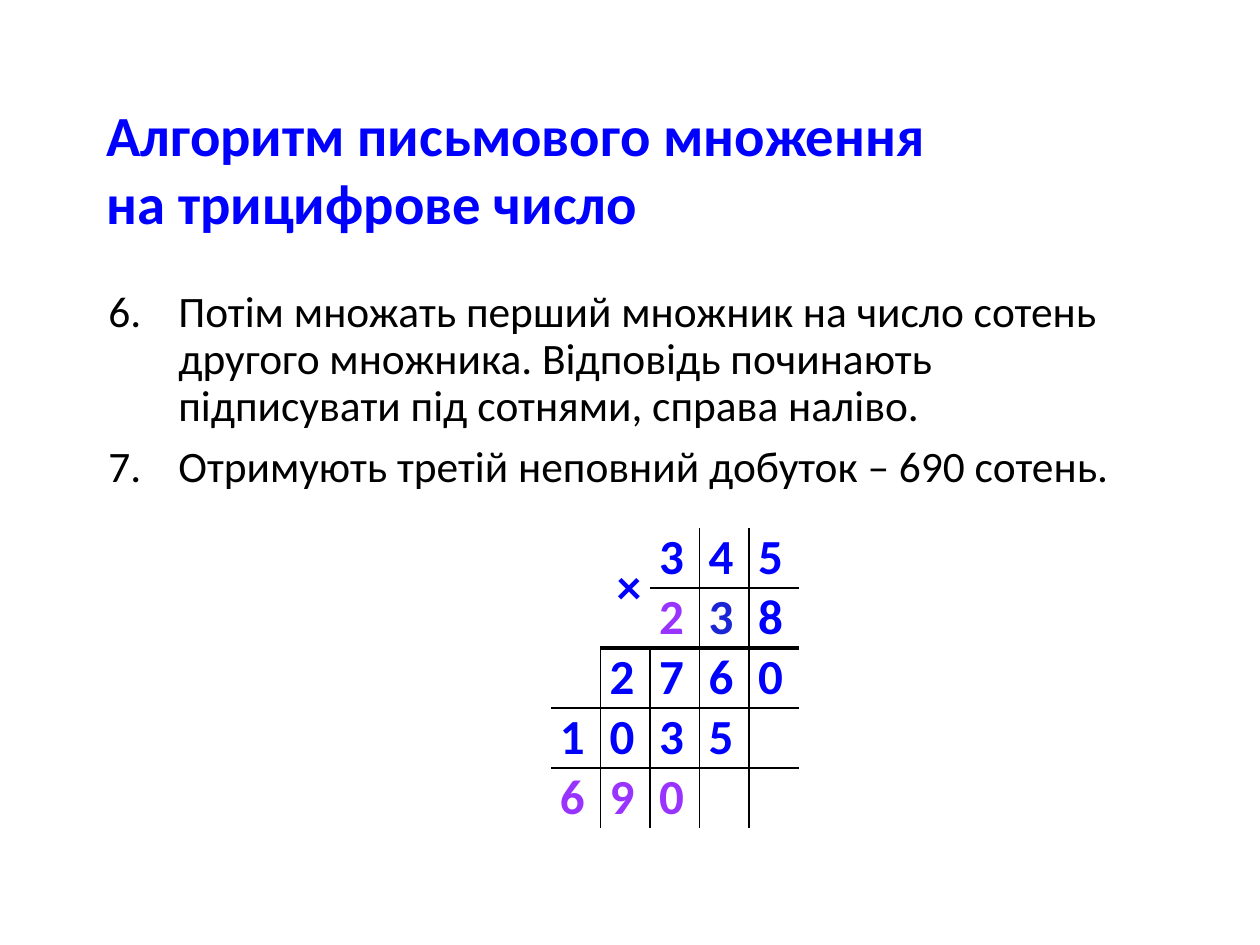
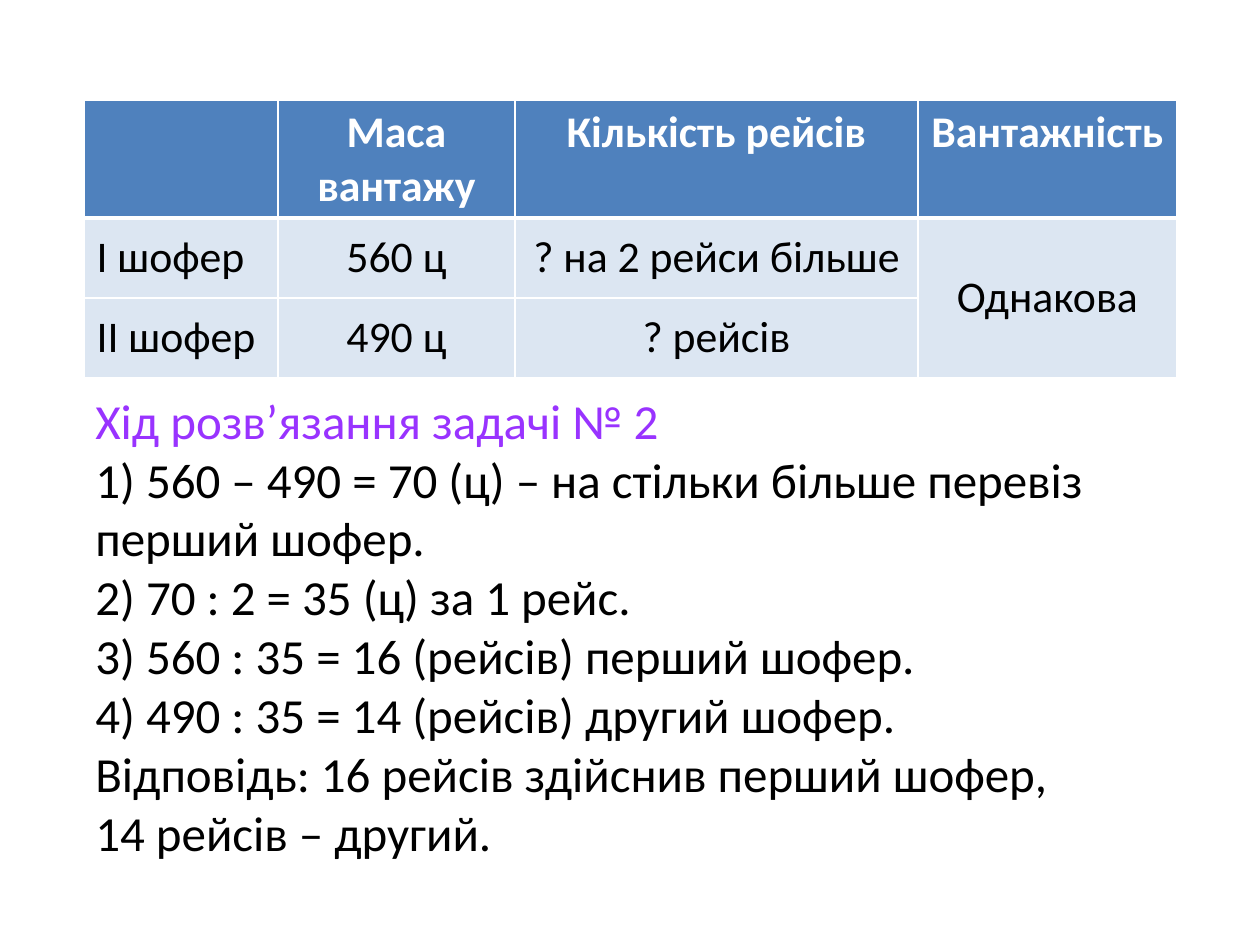
from itertools import product
from lxml.etree import SubElement
from pptx import Presentation
from pptx.dml.color import RGBColor
from pptx.enum.text import MSO_ANCHOR, PP_ALIGN
from pptx.oxml.ns import qn
from pptx.util import Pt

SCALE = 914400 / 126
BLACK = RGBColor(0, 0, 0)
WHITE = RGBColor(255, 255, 255)
BLUE = RGBColor(0, 0, 255)
NAVY = RGBColor(0x1C, 0x25, 0xD6)
VIOLET = RGBColor(0x99, 0x33, 0xFF)
STEEL = RGBColor(0x4F, 0x81, 0xBD)
PALE = RGBColor(0xDC, 0xE6, 0xF2)

FACE = "Calibri"
TITLE = {"name": FACE, "size": Pt(32.4), "bold": True}
BODY = {"name": FACE, "size": Pt(24.8)}
DIGIT = {"name": FACE, "size": Pt(28), "bold": True}
HEAD = {"name": FACE, "size": Pt(25), "bold": True}
ENTRY = {"name": FACE, "size": Pt(25), "bold": False}
STEP = {"name": FACE, "size": Pt(28)}
TIGHT = {"margin_left": 9, "margin_right": 9, "margin_top": 0, "margin_bottom": 0}
PLAIN = "{2D5ABB26-0587-4C30-8999-92F81FD0307C}"

RULES = (
    "Потім множать перший множник на число сотень другого множника. "
    "Відповідь починають підписувати під сотнями, справа наліво.",
    "Отримують третій неповний добуток – 690 сотень.",
)
DIGITS = (" ×345", "  238", " 2760", "1035 ", "690  ")
TINTS = {(1, 2): VIOLET, (1, 3): NAVY, (4, 0): VIOLET, (4, 1): VIOLET, (4, 2): VIOLET}
FREIGHT = (
    ("", "Маса вантажу", "Кількість рейсів", "Вантажність"),
    ("І шофер", "560 ц", "? на 2 рейси більше", "Однакова"),
    ("ІІ шофер", "490 ц", "? рейсів", ""),
)
STEPS = (
    "Хід розв’язання задачі № 2",
    "1) 560 – 490 = 70 (ц) – на стільки більше перевіз\nперший шофер.",
    "2) 70 : 2 = 35 (ц) за 1 рейс.",
    "3) 560 : 35 = 16 (рейсів) перший шофер.",
    "4) 490 : 35 = 14 (рейсів) другий шофер.",
    "Відповідь: 16 рейсів здійснив перший шофер,\n14 рейсів – другий.",
)


def px(size):
    return round(size * SCALE)


def write(para, text, look, tint):
    para.text = text
    for run in para.runs:
        for name, value in look.items():
            setattr(run.font, name, value)
        run.font.color.rgb = tint


def add_text(slide, place, lines, look, tint):
    box = slide.shapes.add_textbox(*map(px, place))
    frame = box.text_frame
    frame.word_wrap = True
    for index, line in enumerate(lines):
        para = frame.add_paragraph() if index else frame.paragraphs[0]
        write(para, line, look, tint)
    return box


def paint(box):
    box.fill.solid()
    box.fill.fore_color.rgb = WHITE


def number(para, start):
    props = para._p.get_or_add_pPr()
    props.set("marL", str(px(70)))
    props.set("indent", str(px(-70)))
    SubElement(props, qn("a:buFont"), typeface="+mj-lt")
    SubElement(props, qn("a:buAutoNum"), type="arabicPeriod", startAt=str(start))


def edge(cell, side, width, tint):
    line = SubElement(cell._tc.get_or_add_tcPr(), qn(f"a:ln{side}"), w=str(Pt(width)))
    fill = SubElement(line, qn("a:solidFill"))
    SubElement(fill, qn("a:srgbClr"), val=str(tint))


def add_grid(slide, place, cols, rows):
    left, top = place
    size = (left, top, sum(cols), sum(rows))
    grid = slide.shapes.add_table(len(rows), len(cols), *map(px, size)).table
    grid._tbl.tblPr[0].text = PLAIN
    grid.first_row = grid.horz_banding = False
    for col, width in zip(grid.columns, cols):
        col.width = px(width)
    for row, height in zip(grid.rows, rows):
        row.height = px(height)
    return grid


def level(row, col):
    if not 0 < row < 5 or col < (2, 1, 0, 0)[row - 1]:
        return 0
    return 2.25 if row == 2 else 1


def upright(row, col):
    return int(0 < col < 5 and (row >= 2 or col >= 3))


def add_sum(slide):
    grid = add_grid(slide, (551, 528), [49.6] * 5, [60] * 5)
    for row, col in product(range(5), repeat=2):
        cell = grid.cell(row, col)
        for name, value in TIGHT.items():
            setattr(cell, name, px(value))
        foot = 2 if (row, col) == (0, 1) else row + 1
        sides = {
            "L": upright(row, col),
            "R": upright(row, col + 1),
            "T": level(row, col),
            "B": level(foot, col),
        }
        for side, width in sides.items():
            if width:
                edge(cell, side, width, BLACK)
        cell.fill.background()
        mark = DIGITS[row][col].strip()
        if mark:
            write(cell.text_frame.paragraphs[0], mark, DIGIT, TINTS.get((row, col), BLUE))
    for col in range(2):
        grid.cell(0, col).merge(grid.cell(1, col))
    sign = grid.cell(0, 1)
    sign.vertical_anchor = MSO_ANCHOR.MIDDLE
    sign.text_frame.paragraphs[0].alignment = PP_ALIGN.RIGHT


def add_freight(slide):
    grid = add_grid(slide, (84, 100), (194, 237, 403, 259), (118, 80, 80))
    for row, col in product(range(3), range(4)):
        cell = grid.cell(row, col)
        for side in "LRTB":
            thick = (row, side) in ((0, "B"), (1, "T"))
            edge(cell, side, 3 if thick else 1, WHITE)
        cell.fill.solid()
        cell.fill.fore_color.rgb = PALE if row else STEEL
        para = cell.text_frame.paragraphs[0]
        if FREIGHT[row][col]:
            write(para, FREIGHT[row][col], ENTRY if row else HEAD, BLACK if row else WHITE)
        if row:
            cell.vertical_anchor = MSO_ANCHOR.MIDDLE
        if col:
            para.alignment = PP_ALIGN.CENTER
    grid.cell(1, 3).merge(grid.cell(2, 3))


def show_rule(slide):
    head = "Алгоритм письмового множення\nна трицифрове число"
    title = add_text(slide, (94, 101, 1092, 134), [head], TITLE, BLUE)
    title.text_frame.vertical_anchor = MSO_ANCHOR.MIDDLE
    body = add_text(slide, (96, 284, 1041, 247), RULES, BODY, BLACK)
    paint(body)
    first, second = body.text_frame.paragraphs
    first.line_spacing = 0.9
    second.space_before = Pt(5)
    for para in (first, second):
        number(para, 6)
    add_sum(slide)


def show_task(slide):
    add_freight(slide)
    steps = add_text(slide, (83, 384, 1094, 488), STEPS, STEP, BLACK)
    paint(steps)
    steps.text_frame.paragraphs[0].runs[0].font.color.rgb = VIOLET


def main():
    deck = Presentation()
    deck.slide_width, deck.slide_height = px(1260), px(945)
    for show in (show_rule, show_task):
        show(deck.slides.add_slide(deck.slide_layouts[6]))
    deck.save("out.pptx")


if __name__ == "__main__":
    main()
